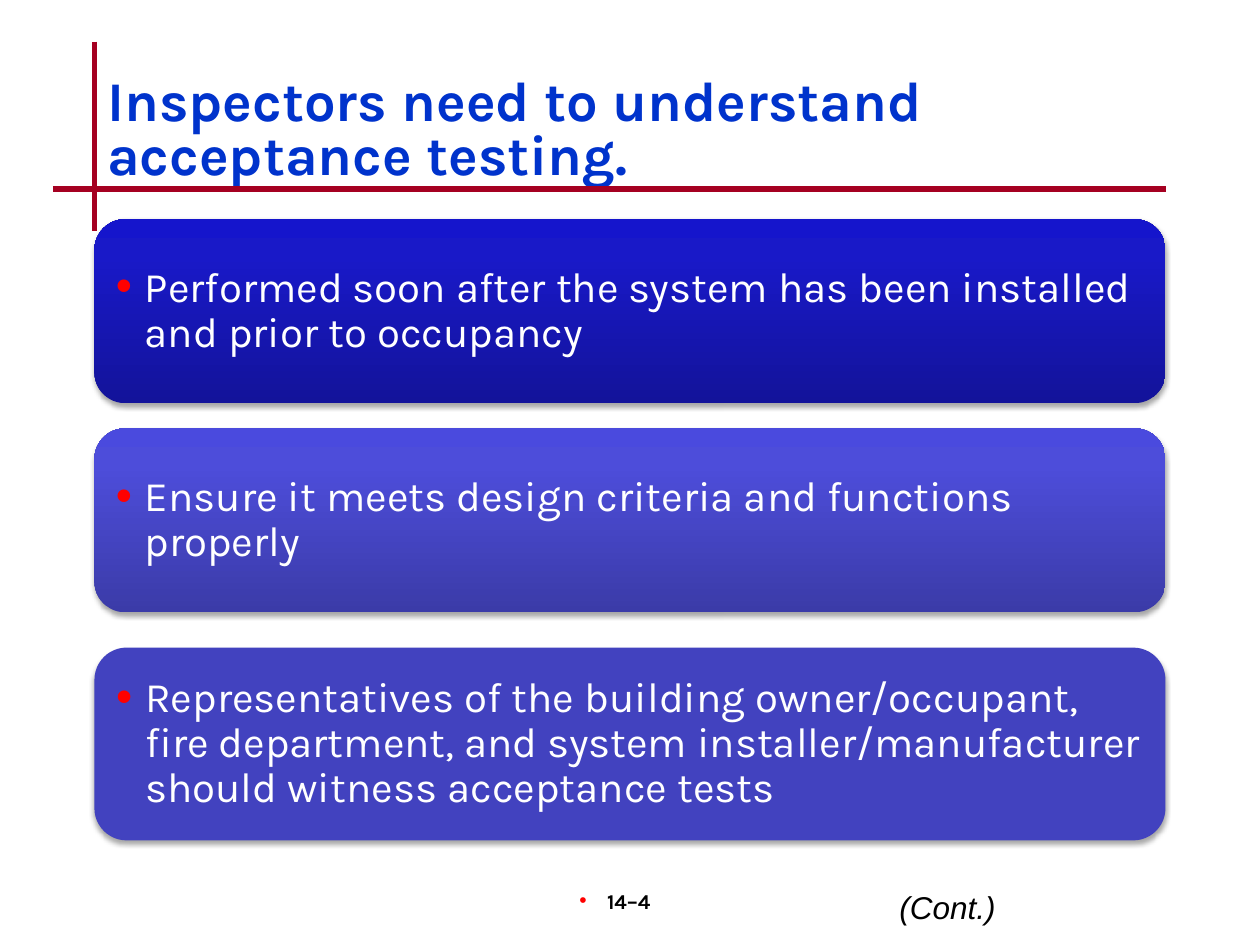
from dataclasses import dataclass

from lxml.etree import SubElement
from pptx import Presentation
from pptx.dml.color import RGBColor
from pptx.enum.shapes import MSO_CONNECTOR, MSO_SHAPE
from pptx.enum.text import MSO_ANCHOR as Anchor, MSO_AUTO_SIZE as AutoSize, PP_ALIGN as Align
from pptx.oxml.ns import qn
from pptx.util import Inches, Pt

LEFT, WIDTH = 0.75, 8.5
RULE_RED, BULLET_RED = "A50021", "FF0000"


@dataclass
class Panel:
    top: float
    height: float
    stops: list[tuple[int, str]]  # percent from the bottom edge, colour
    text: str


PANELS = [
    Panel(1.74, 1.46, [(0, "13139A"), (80, "1919C8"), (100, "1515CC")],
          "Performed soon after the system has been installed and prior to occupancy"),
    Panel(3.4, 1.46, [(0, "3B3BA8"), (80, "4D4DDA"), (100, "4A4ADE")],
          "Ensure it meets design criteria and functions properly"),
    Panel(5.14, 1.53, [(0, "4242BF")],
          "Representatives of the building owner/occupant, fire department, "
          "and system installer/manufacturer should witness acceptance tests"),
]


def color(value: str) -> RGBColor:
    return RGBColor.from_string(value)


def add_element(parent, tag: str, **attributes):
    return SubElement(parent, qn(tag), {key: str(value) for key, value in attributes.items()})


def add_run(paragraph, text: str, size: float, value: str, font="Karla", bold=False, italic=False) -> None:
    run = paragraph.add_run()
    run.text = text
    run.font.name, run.font.size = font, Pt(size)
    run.font.bold, run.font.italic = bold, italic
    run.font.color.rgb = color(value)


def add_bullet(paragraph, indent: float, right: float = 0, percent: int = 100) -> None:
    properties = paragraph._p.get_or_add_pPr()
    properties.set("marL", str(Inches(indent)))
    properties.set("marR", str(Inches(right)))
    properties.set("indent", str(-Inches(indent)))
    add_element(add_element(properties, "a:buClr"), "a:srgbClr", val=BULLET_RED)
    add_element(properties, "a:buSzPct", val=percent * 1000)
    add_element(properties, "a:buFont", typeface="Arial")
    add_element(properties, "a:buChar", char="•")


def add_rule(shapes, x1: float, y1: float, x2: float, y2: float) -> None:
    rule = shapes.add_connector(MSO_CONNECTOR.STRAIGHT, Inches(x1), Inches(y1), Inches(x2), Inches(y2))
    rule.line.color.rgb = color(RULE_RED)
    rule.line.width = Pt(3)
    add_element(rule._element.spPr, "a:effectLst")


def fill_panel(shape, stops: list[tuple[int, str]]) -> None:
    if len(stops) == 1:
        shape.fill.solid()
        shape.fill.fore_color.rgb = color(stops[0][1])
        return
    shape.fill.gradient()
    shape.fill.gradient_angle = 90
    stop_list = shape._element.spPr.find(qn("a:gradFill")).find(qn("a:gsLst"))
    for old_stop in list(stop_list):
        stop_list.remove(old_stop)
    for percent, value in stops:
        add_element(add_element(stop_list, "a:gs", pos=percent * 1000), "a:srgbClr", val=value)


def add_panel(shapes, panel: Panel) -> None:
    shape = shapes.add_shape(MSO_SHAPE.ROUNDED_RECTANGLE, Inches(LEFT), Inches(panel.top),
                             Inches(WIDTH), Inches(panel.height))
    fill_panel(shape, panel.stops)
    shape.line.fill.background()

    # Soft shadow below the panel
    shape.shadow.inherit = False
    effects = shape._element.spPr.find(qn("a:effectLst"))
    shadow = add_element(effects, "a:outerShdw", blurRad=Pt(3.1), dist=Pt(1.8), dir=90 * 60000, rotWithShape=0)
    add_element(add_element(shadow, "a:srgbClr", val="000000"), "a:alpha", val=35000)

    frame = shape.text_frame
    frame.word_wrap = True
    frame.vertical_anchor = Anchor.MIDDLE
    frame.margin_left = frame.margin_right = frame.margin_top = frame.margin_bottom = Inches(0.1)
    point = frame.paragraphs[0]
    point.alignment = Align.LEFT
    point.line_spacing = 0.9
    add_bullet(point, 0.23, percent=110)
    add_run(point, panel.text, 24, "FFFFFF")


def add_note(shapes, left: float, width: float, height: float, align: Align):
    box = shapes.add_textbox(Inches(left), Inches(7), Inches(width), Inches(height))
    box.text_frame.word_wrap = True
    paragraph = box.text_frame.paragraphs[0]
    paragraph.alignment = align
    return paragraph


def main() -> None:
    deck = Presentation()
    deck.slide_width, deck.slide_height = Inches(10), Inches(7.5)
    slide = deck.slides.add_slide(deck.slide_layouts.get_by_name("Title Only"))
    shapes = slide.shapes

    # Crossed rules beside the title
    add_rule(shapes, LEFT, 0.33, LEFT, 1.83)
    add_rule(shapes, 0.42, 1.5, LEFT + WIDTH, 1.5)

    # Title
    title = shapes.title
    title.left, title.top, title.width, title.height = map(Inches, (LEFT, 0.55, WIDTH, 1))
    title.text_frame.auto_size = AutoSize.NONE
    title.text_frame.vertical_anchor = Anchor.MIDDLE
    heading = title.text_frame.paragraphs[0]
    heading.alignment = Align.LEFT
    heading.line_spacing = 0.8
    add_run(heading, "Inspectors need to understand acceptance testing.", 32, "0033CC", bold=True)

    # Key points
    for panel in PANELS:
        add_panel(shapes, panel)

    # Page number and continuation note
    page_number = add_note(shapes, 3.92, 2.08, 0.5, Align.CENTER)
    add_bullet(page_number, 0.22, right=0.16)
    add_run(page_number, "14–4", 12, "000000", bold=True)
    continuation = add_note(shapes, 6.33, 1.67, 0.4, Align.RIGHT)
    add_run(continuation, "(Cont.)", 18, "000000", font="Arial", italic=True)

    deck.save("out.pptx")


if __name__ == "__main__":
    main()
